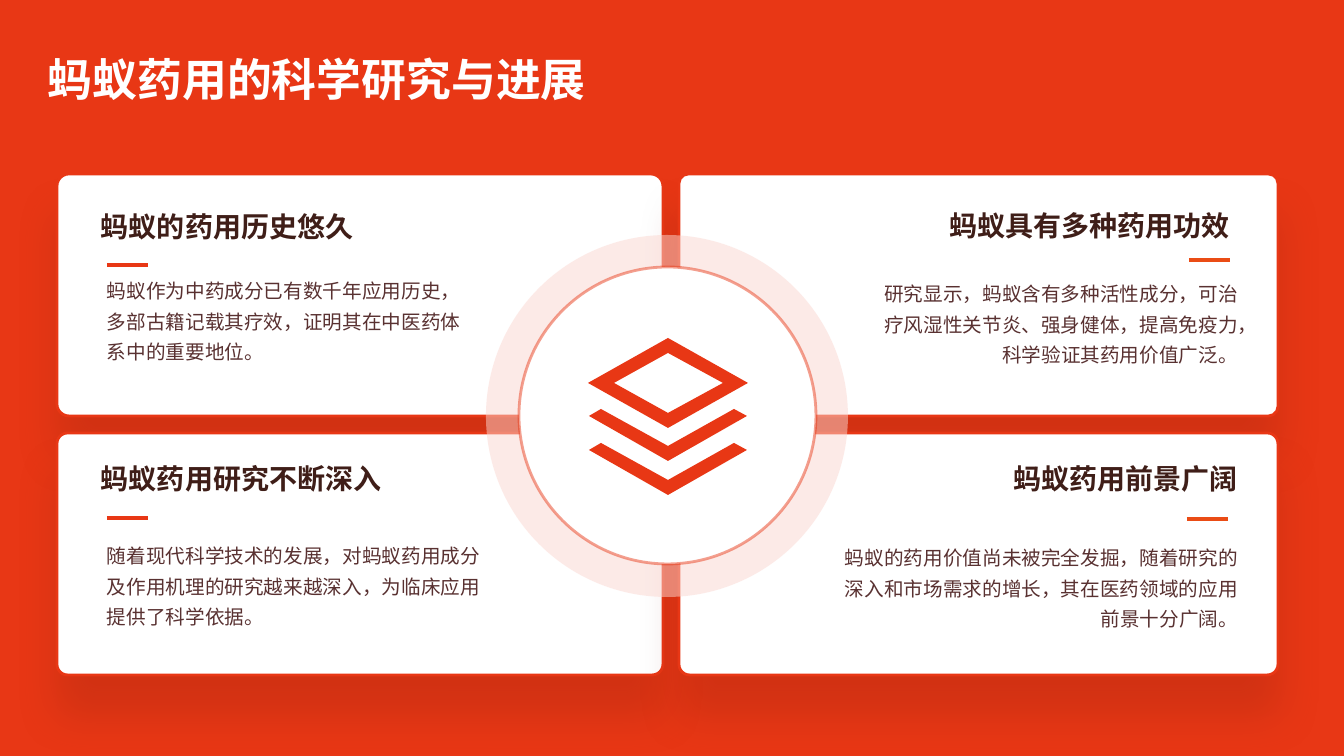
from pptx import Presentation
from pptx.dml.color import RGBColor
from pptx.enum.shapes import MSO_CONNECTOR, MSO_SHAPE
from pptx.enum.text import MSO_ANCHOR, PP_ALIGN
from pptx.oxml import parse_xml
from pptx.oxml.ns import nsdecls, qn
from pptx.util import Pt
from lxml import etree

PX = 12192000 / 1344
LEFT, RIGHT = PP_ALIGN.LEFT, PP_ALIGN.RIGHT
TOP, MIDDLE = MSO_ANCHOR.TOP, MSO_ANCHOR.MIDDLE
RECT, ROUNDED, OVAL = MSO_SHAPE.RECTANGLE, MSO_SHAPE.ROUNDED_RECTANGLE, MSO_SHAPE.OVAL
STRAIGHT = MSO_CONNECTOR.STRAIGHT

THEME = {
    "font": "Noto Sans CJK SC",
    "red": "E83715", "orange": "EA4C15", "white": "FFFFFF", "halo": "FBD7D0",
    "shadow": "741B0A",
    # text styles: size, colour, bold, line spacing, space around, anchor
    "title": (32, "FFFFFF", True, 1.2, 0, MIDDLE),
    "heading": (20, "3F1E18", True, 1.0, 0, TOP),
    "body": (14, "593131", False, 1.3, 3, TOP),
}

prs = Presentation()
prs.slide_width, prs.slide_height = round(1344 * PX), round(756 * PX)
slide = prs.slides.add_slide(prs.slide_layouts[6])


def add_panel(parent, kind, box, fill, border=None):
    panel = parent.add_shape(kind, *[round(v * PX) for v in box])
    panel.shadow.inherit = False
    panel.fill.solid()
    panel.fill.fore_color.rgb = RGBColor.from_string(fill)
    if border:
        panel.line.color.rgb = RGBColor.from_string(border)
        panel.line.width = Pt(2)
    else:
        panel.line.fill.background()
    return panel


def add_text(box, text, style, align=LEFT):
    size, color, bold, spacing, around, anchor = THEME[style]
    frame = slide.shapes.add_textbox(*[round(v * PX) for v in box]).text_frame
    frame.word_wrap = True
    frame.vertical_anchor = anchor
    frame.text = text
    paragraph = frame.paragraphs[0]
    paragraph.alignment = align
    paragraph.line_spacing = spacing
    paragraph.space_before = paragraph.space_after = Pt(around)
    font = paragraph.runs[0].font
    font.size, font.bold, font.name = Pt(size), bold, THEME["font"]
    font.color.rgb = RGBColor.from_string(color)
    etree.SubElement(font._element, qn("a:ea")).set("typeface", THEME["font"])


# Background
add_panel(slide.shapes, RECT, (0, 0, 1344, 756), THEME["red"])

# Four cards with a soft shadow below
cards = [
    ((57, 174, 606, 242), 0.05),
    ((57, 433, 606, 242), 0.044),
    ((679, 174, 599, 242), 0.039),
    ((679, 433, 599, 242), 0.044),
]
for box, rounding in cards:
    card = add_panel(slide.shapes, ROUNDED, box, THEME["white"], THEME["red"])
    card.adjustments[0] = rounding
    card._element.spPr.find(qn("a:effectLst")).append(parse_xml(
        f'<a:outerShdw {nsdecls("a")} blurRad="{Pt(30)}" dist="{Pt(28)}" dir="5400000" '
        f'algn="t" rotWithShape="0"><a:srgbClr val="{THEME["shadow"]}">'
        '<a:alpha val="19000"/></a:srgbClr></a:outerShdw>'))

# Central medallion: translucent halo and ringed disc
medallion = slide.shapes.add_group_shape().shapes
halo = add_panel(medallion, OVAL, (486, 235, 362, 362), THEME["halo"])
disc = add_panel(medallion, OVAL, (519, 267, 297, 297), THEME["white"], THEME["red"])
for paint, opacity in ((halo._element.spPr, 50), (disc.line._ln, 48)):
    color = paint.find(qn("a:solidFill")).find(qn("a:srgbClr"))
    etree.SubElement(color, qn("a:alpha")).set("val", str(opacity * 1000))

# Topics: heading, short rule, body
topics = [
    (LEFT, "蚂蚁的药用历史悠久", (91, 205, 390, 45), (107, 265), "red",
     "蚂蚁作为中药成分已有数千年应用历史，多部古籍记载其疗效，证明其在中医药体系中的重要地位。",
     (97, 267, 375, 132)),
    (RIGHT, "蚂蚁具有多种药用功效", (881, 204, 359, 45), (1189, 260), "orange",
     "研究显示，蚂蚁含有多种活性成分，可治疗风湿性关节炎、强身健体，提高免疫力，科学验证其药用价值广泛。",
     (856, 270, 392, 130)),
    (LEFT, "蚂蚁药用研究不断深入", (91, 457, 358, 48), (107, 518), "red",
     "随着现代科学技术的发展，对蚂蚁药用成分及作用机理的研究越来越深入，为临床应用提供了科学依据。",
     (97, 532, 399, 132)),
    (RIGHT, "蚂蚁药用前景广阔", (894, 457, 354, 45), (1187, 519), "orange",
     "蚂蚁的药用价值尚未被完全发掘，随着研究的深入和市场需求的增长，其在医药领域的应用前景十分广阔。",
     (826, 534, 422, 130)),
]
for align, heading, heading_box, (x, y), rule_color, body, body_box in topics:
    rule = slide.shapes.add_connector(
        STRAIGHT, *[round(v * PX) for v in (x, y, x + 41, y)])
    rule.line.color.rgb = RGBColor.from_string(THEME[rule_color])
    rule.line.width = Pt(2.25)
    etree.SubElement(rule._element.spPr, qn("a:effectLst"))
    add_text(body_box, body, "body", align)
    add_text(heading_box, heading, "heading", align)

# Layers icon: two chevrons below a hollow diamond
chevrons = [
    [(734, y), (747, y + 7), (668, y + 52), (589, y + 7), (601, y), (668, y + 37)]
    for y in (443, 409)
]
diamonds = [
    [(668, 338), (748, 383), (668, 428), (588, 383)],
    [(668, 353), (614, 383), (668, 413), (723, 383)],
]
outlines = chevrons + diamonds
builder = slide.shapes.build_freeform(*outlines[0][0], scale=PX)
for outline in outlines:
    if outline is not outlines[0]:
        builder.move_to(*outline[0])
    builder.add_line_segments(outline[1:], close=True)
layers = builder.convert_to_shape()
layers.shadow.inherit = False
layers.fill.solid()
layers.fill.fore_color.rgb = RGBColor.from_string(THEME["red"])
layers.line.fill.background()

# Title
add_text((38, 33, 1267, 80), "蚂蚁药用的科学研究与进展", "title")

prs.save("out.pptx")
